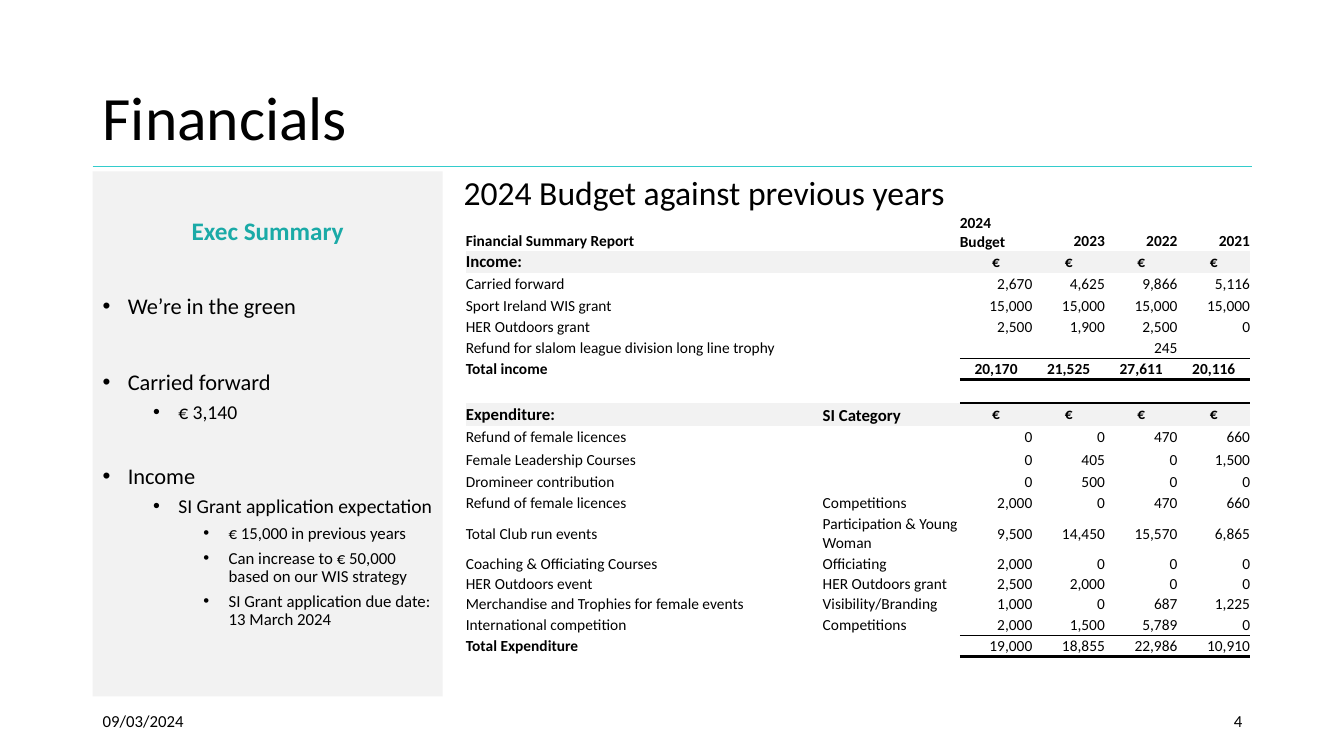
from lxml.etree import SubElement, Element
from pptx import Presentation
from pptx.dml.color import RGBColor
from pptx.enum.shapes import MSO_CONNECTOR as CONNECTOR, MSO_SHAPE as SHAPE
from pptx.enum.text import MSO_ANCHOR as ANCHOR, PP_ALIGN as ALIGN
from pptx.oxml.ns import qn
from pptx.util import Inches, Pt

BLACK = RGBColor(0x00, 0x00, 0x00)
PALE_GREY = RGBColor(0xF2, 0xF2, 0xF2)
TEAL = RGBColor(0x1A, 0xAA, 0xA7)
TURQUOISE = RGBColor(0x33, 0xCC, 0xCC)
PLAIN_TABLE = "{2D5ABB26-0587-4C30-8999-92F81FD0307C}"

# Executive summary: level, text, size, space before
SUMMARY = [
    (0, "We’re in the green", 16, 35),
    (0, "Carried forward", 16, 37),
    (1, "€ 3,140", 14, 5),
    (0, "Income", 16, 30),
    (1, "SI Grant application expectation", 14, 5),
    (2, "€ 15,000 in previous years", 12, 5),
    (2, "Can increase to € 50,000 based on our WIS strategy", 12, 5),
    (2, "SI Grant application due date: 13 March 2024", 12, 5),
]

# Budget: kind of row, height, item, category, then the four years
EUROS = ["€"] * 4
BUDGET = [
    ("years", 0.22, "Financial Summary Report", "", "2024 Budget", "2023", "2022", "2021"),
    ("heading", 0.22, "Income:", "", *EUROS),
    ("item", 0.22, "Carried forward", "", "2,670", "4,625", "9,866", "5,116"),
    ("item", 0.22, "Sport Ireland WIS grant", "", *["15,000"] * 4),
    ("item", 0.2, "HER Outdoors grant", "", "2,500", "1,900", "2,500", "0"),
    ("last", 0.21, "Refund for slalom league division long line trophy", "", "", "", "245", ""),
    ("income", 0.21, "Total income", "", "20,170", "21,525", "27,611", "20,116"),
    ("gap", 0.23, *[""] * 6),
    ("heading", 0.23, "Expenditure:", "SI Category", *EUROS),
    ("item", 0.23, "Refund of female licences", "", "0", "0", "470", "660"),
    ("item", 0.22, "Female Leadership Courses", "", "0", "405", "0", "1,500"),
    ("item", 0.22, "Dromineer contribution", "", "0", "500", "0", "0"),
    ("item", 0.2, "Refund of female licences", "Competitions", "2,000", "0", "470", "660"),
    ("item", 0.4, "Total Club run events", "Participation & Young Woman",
     "9,500", "14,450", "15,570", "6,865"),
    ("item", 0.2, "Coaching & Officiating Courses", "Officiating", "2,000", "0", "0", "0"),
    ("item", 0.2, "HER Outdoors event", "HER Outdoors grant", "2,500", "2,000", "0", "0"),
    ("item", 0.2, "Merchandise and Trophies for female events", "Visibility/Branding",
     "1,000", "0", "687", "1,225"),
    ("last", 0.21, "International competition", "Competitions", "2,000", "1,500", "5,789", "0"),
    ("spending", 0.21, "Total Expenditure", "", "19,000", "18,855", "22,986", "10,910"),
]
COLUMNS = [3.54, 1.36] + [0.72] * 4
# Rules around the year cells, bottom first: side and points
RULES = {
    "last": {"lnB": 1},
    "income": {"lnB": 2, "lnT": 1},
    "gap": {"lnT": 2},
    "spending": {"lnB": 2, "lnT": 1},
}


class SlideBuilder:
    def __init__(self, slide, font="Calibri"):
        self.slide = slide
        self.shapes = slide.shapes
        self.font = font

    def add_words(self, paragraph, text, size, color=BLACK, bold=False, **layout):
        for name, value in layout.items():
            setattr(paragraph, name, value)
        run = paragraph.add_run()
        run.text = text
        look = {"name": self.font, "size": Pt(size), "bold": bold}
        for name, value in look.items():
            setattr(run.font, name, value)
        run.font.color.rgb = color

    def bullet(self, paragraph, level):
        paragraph.level = level
        properties = paragraph._p.get_or_add_pPr()
        properties.set("marL", str(Inches(0.25 + 0.5 * level)))
        properties.set("indent", str(Inches(-0.25)))
        SubElement(properties, qn("a:buFont"), typeface="Arial")
        SubElement(properties, qn("a:buChar"), char="•")

    def text(self, place, words, size, anchor=ANCHOR.MIDDLE, **layout):
        frame = self.shapes.add_textbox(*map(Inches, place)).text_frame
        frame.word_wrap = True
        frame.vertical_anchor = anchor
        self.add_words(frame.paragraphs[0], words, size, **layout)

    def rule(self, left, top, right, color, width):
        line = self.shapes.add_connector(
            CONNECTOR.STRAIGHT, Inches(left), Inches(top), Inches(right), Inches(top))
        line.line.color.rgb = color
        line.line.width = Pt(width)
        SubElement(line._element.spPr, qn("a:effectLst"))

    def panel(self, place, heading, points):
        panel = self.shapes.add_shape(SHAPE.RECTANGLE, *map(Inches, place))
        panel.shadow.inherit = False
        panel.fill.solid()
        panel.fill.fore_color.rgb = PALE_GREY
        panel.line.fill.background()
        frame = panel.text_frame
        frame.word_wrap = True
        frame.vertical_anchor = ANCHOR.TOP
        frame.margin_top = Inches(0.47)
        self.add_words(frame.paragraphs[0], heading, 18, TEAL, True,
                       alignment=ALIGN.CENTER, line_spacing=0.9)
        for level, words, size, before in points:
            point = frame.add_paragraph()
            self.bullet(point, level)
            self.add_words(point, words, size, alignment=ALIGN.LEFT,
                           line_spacing=0.9, space_before=Pt(before))

    def cell(self, cell, words, size, bold, align, anchor, fill, rules):
        margins = dict.fromkeys(
            ("margin_left", "margin_right", "margin_top", "margin_bottom"), 0)
        for name, value in {**margins, "vertical_anchor": anchor}.items():
            setattr(cell, name, value)
        if fill:
            cell.fill.solid()
            cell.fill.fore_color.rgb = fill
        else:
            cell.fill.background()
        paragraph = cell.text_frame.paragraphs[0]
        if words:
            self.add_words(paragraph, words, size, bold=bold, alignment=align)
        else:
            SubElement(paragraph._p, qn("a:endParaRPr"), sz=str(size * 100))
        for side, points in rules.items():
            border = Element(qn("a:" + side), w=str(Pt(points)))
            solid = SubElement(border, qn("a:solidFill"))
            SubElement(solid, qn("a:srgbClr"), val=str(BLACK))
            cell._tc.get_or_add_tcPr().insert(0, border)

    def budget(self, place, rows, widths):
        table = self.shapes.add_table(
            len(rows), len(widths), *map(Inches, place)).table
        table.first_row = table.horz_banding = False
        table._tbl.tblPr.find(qn("a:tableStyleId")).text = PLAIN_TABLE
        for column, width in zip(table.columns, widths):
            column.width = Inches(width)
        for r, (kind, height, *entries) in enumerate(rows):
            table.rows[r].height = Inches(height)
            heading = kind == "heading"
            for c, words in enumerate(entries):
                is_year = c >= 2
                if not is_year or words == "2024 Budget":
                    align = ALIGN.LEFT
                elif kind in ("heading", "income"):
                    align = ALIGN.CENTER
                else:
                    align = ALIGN.RIGHT
                bold = (kind in ("years", "heading", "income")
                        or kind == "spending" and not is_year)
                low = kind == "years" or heading and c == 1
                self.cell(table.cell(r, c), words,
                          12 if heading and words and not is_year else 11,
                          bold, align, ANCHOR.BOTTOM if low else ANCHOR.MIDDLE,
                          PALE_GREY if heading else None,
                          RULES.get(kind, {}) if is_year else {})


def main():
    deck = Presentation()
    deck.slide_width, deck.slide_height = Inches(13.33), Inches(7.5)
    financials = SlideBuilder(deck.slides.add_slide(deck.slide_layouts[6]))

    # Title and rule
    financials.rule(0.92, 1.65, 12.42, TURQUOISE, 0.5)
    financials.text((0.92, 0.76, 11.5, 0.88), "Financials", 44, line_spacing=0.9)

    # Executive summary
    financials.panel((0.92, 1.7, 3.47, 5.21), "Exec Summary", SUMMARY)

    # Budget table
    financials.text((4.5, 1.7, 8.33, 5.11), "2024 Budget against previous years", 24,
                    ANCHOR.TOP, line_spacing=0.9)
    financials.budget((4.62, 2.12, 7.79, 4.37), BUDGET, COLUMNS)

    # Footer
    financials.text((0.92, 6.95, 3, 0.4), "09/03/2024", 12)
    financials.text((9.42, 6.95, 3, 0.4), "4", 12, alignment=ALIGN.RIGHT)

    deck.save("out.pptx")


if __name__ == "__main__":
    main()
